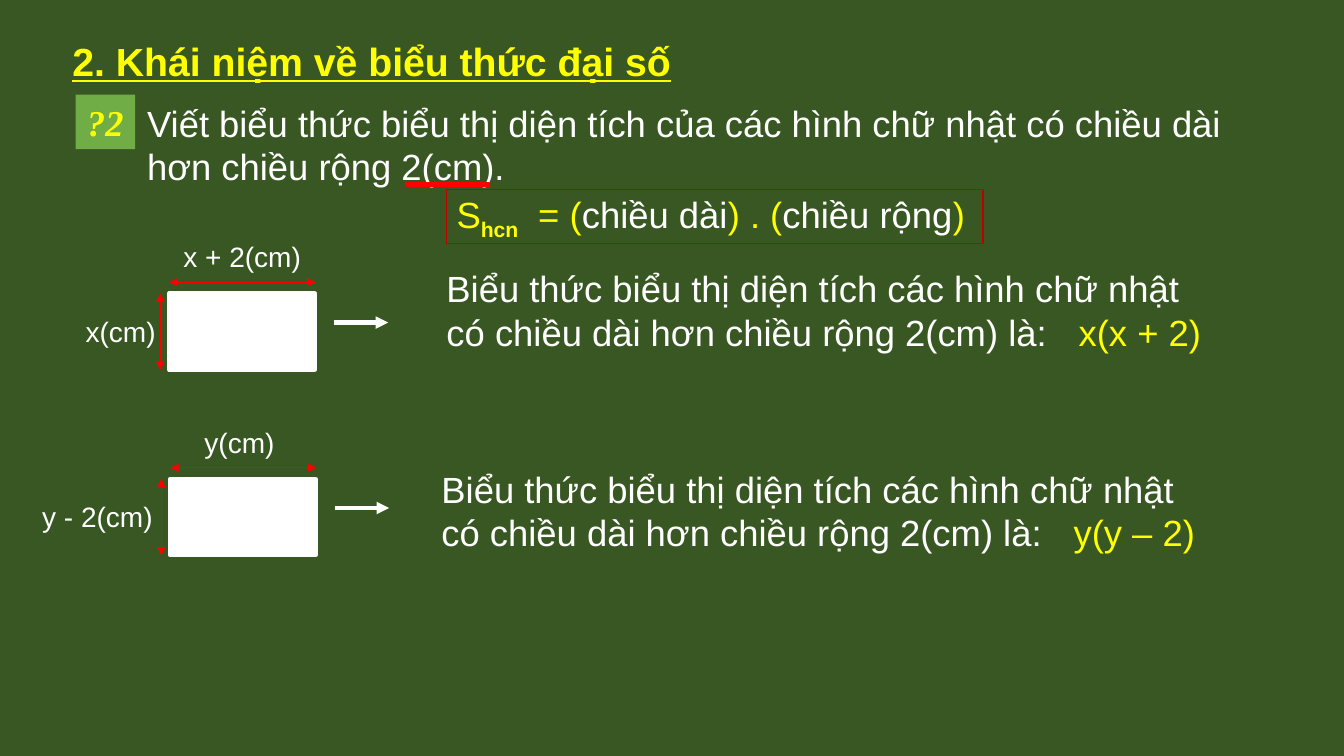
from lxml import etree
from pptx import Presentation, util as u
from pptx.dml.color import RGBColor
from pptx.enum import shapes, text
from pptx.oxml import ns

WHITE, YELLOW, RED, BOARD = "FFFFFF", "FFFF00", "FF0000", "385723"


def rgb(value):
    return RGBColor.from_string(value)


class Board:
    """Slide with one style: Arial text on a green board."""

    font, body, label = "Arial", 26, 20

    def __init__(self, slide):
        self.slide = slide
        slide.background.fill.solid()
        slide.background.fill.fore_color.rgb = rgb(BOARD)

    def fill_text(self, shape, paragraphs, size, font=None, bold=None, italic=None,
                  underline=None, align=text.PP_ALIGN.LEFT, wrap=True, tab=None):
        """Each paragraph is a list of (words, colour) runs."""
        frame = shape.text_frame
        frame.word_wrap = wrap
        frame.auto_size = text.MSO_AUTO_SIZE.SHAPE_TO_FIT_TEXT
        for i, runs in enumerate(paragraphs):
            p = frame.add_paragraph() if i else frame.paragraphs[0]
            p.alignment = align
            p.font.name, p.font.size = font or self.font, u.Pt(size)
            p.font.bold, p.font.italic, p.font.underline = bold, italic, underline
            p.font.color.rgb = rgb(runs[0][1])
            for words, colour in runs:
                run = p.add_run()
                run.text = words
                run.font.color.rgb = rgb(colour)
            if tab:
                stops = etree.Element(ns.qn("a:tabLst"))
                etree.SubElement(stops, ns.qn("a:tab"), pos=str(u.Inches(tab)), algn="l")
                p._p.get_or_add_pPr().insert_element_before(stops, "a:defRPr", "a:extLst")
        return frame

    def text(self, at, paragraphs, size=body, **style):
        box = self.slide.shapes.add_textbox(*map(u.Inches, at))
        return self.fill_text(box, paragraphs, size, **style)

    def rect(self, at, fill, line=None, width=0.75):
        box = self.slide.shapes.add_shape(shapes.MSO_SHAPE.RECTANGLE, *map(u.Inches, at))
        box.shadow.inherit = False
        box.fill.solid()
        box.fill.fore_color.rgb = rgb(fill)
        if line:
            box.line.color.rgb = rgb(line)
            box.line.width = u.Pt(width)
        else:
            box.line.fill.background()
        return box

    def line(self, start, end, colour, width, heads=()):
        """heads holds "headEnd" and/or "tailEnd"."""
        rule = self.slide.shapes.add_connector(
            shapes.MSO_CONNECTOR.STRAIGHT, *map(u.Inches, (*start, *end)))
        rule.line.color.rgb = rgb(colour)
        rule.line.width = u.Pt(width)
        outline = rule._element.spPr.find(ns.qn("a:ln"))
        for head in heads:
            etree.SubElement(outline, ns.qn(f"a:{head}"), type="triangle")
        etree.SubElement(rule._element.spPr, ns.qn("a:effectLst"))

    def rectangle_case(self, left, top, length, breadth, area, area_at):
        """A measured rectangle, an arrow and its area expression.

        length and breadth are (words, left, width) of the two labels.
        """
        both = ("headEnd", "tailEnd")
        self.line((left + 1.63, top + 0.29), (left + 2.17, top + 0.29), WHITE, 3, both[1:])
        self.rect((left, top, 1.44, 0.76), WHITE, WHITE, 3)
        self.line((left - 0.09, top), (left - 0.09, top + 0.76), RED, 0.5, both)
        self.line((left, top - 0.11), (left + 1.45, top - 0.11), RED, 0.5, both)
        for (words, x, width), y in ((length, top - 0.58), (breadth, top + 0.16)):
            self.text((x, y, width, 0.44), [[(words, WHITE)]], self.label)
        self.text((*area_at, 7.78, 0.98), [[
            ("Biểu thức biểu thị diện tích các hình chữ nhật "
             "có chiều dài hơn chiều rộng 2(cm) là:\t", WHITE), (area, YELLOW)]], tab=6.27)


def main():
    deck = Presentation()
    deck.slide_width, deck.slide_height = u.Inches(13.33), u.Inches(7.5)
    board = Board(deck.slides.add_slide(deck.slide_layouts[6]))

    # Heading
    board.text((0.62, 0.32, 6.21, 0.57), [[("2. Khái niệm về biểu thức đại số", YELLOW)]],
               28, bold=True, underline=True, wrap=False)

    # Question
    board.text((1.36, 0.95, 11.19, 0.98), [
        [("Viết biểu thức biểu thị diện tích của các hình chữ nhật có chiều dài", WHITE)],
        [("hơn chiều rộng 2(cm).", WHITE)]])
    badge = board.rect((0.75, 0.94, 0.59, 0.54), "70AD47")
    board.fill_text(badge, [[("?2", YELLOW)]], board.body, font="Times New Roman",
                    bold=True, italic=True, align=text.PP_ALIGN.CENTER)

    # Area formula
    formula = board.rect((4.43, 1.88, 5.32, 0.54), BOARD, "C00000")
    frame = board.fill_text(formula, [[
        ("S", YELLOW), ("hcn", YELLOW), ("\t= (", YELLOW), ("chiều dài", WHITE),
        (") . (", YELLOW), ("chiều rộng", WHITE), (")", YELLOW)]], board.body, tab=0.81)
    subscript = frame.paragraphs[0].runs[1].font
    subscript.bold = True
    subscript._element.set("baseline", "-25000")

    # Underline of the given difference
    board.line((4.02, 1.83), (4.85, 1.83), RED, 3)

    # The two ways to name the sides
    board.rectangle_case(1.68, 2.91, ("x + 2(cm)", 1.72, 1.52), ("x(cm)", 0.75, 0.97),
                         "x(x + 2)", (4.33, 2.59))
    board.rectangle_case(1.69, 4.75, ("y(cm)", 1.93, 0.93), ("y - 2(cm)", 0.32, 1.44),
                         "y(y – 2)", (4.28, 4.58))

    deck.save("out.pptx")


if __name__ == "__main__":
    main()
